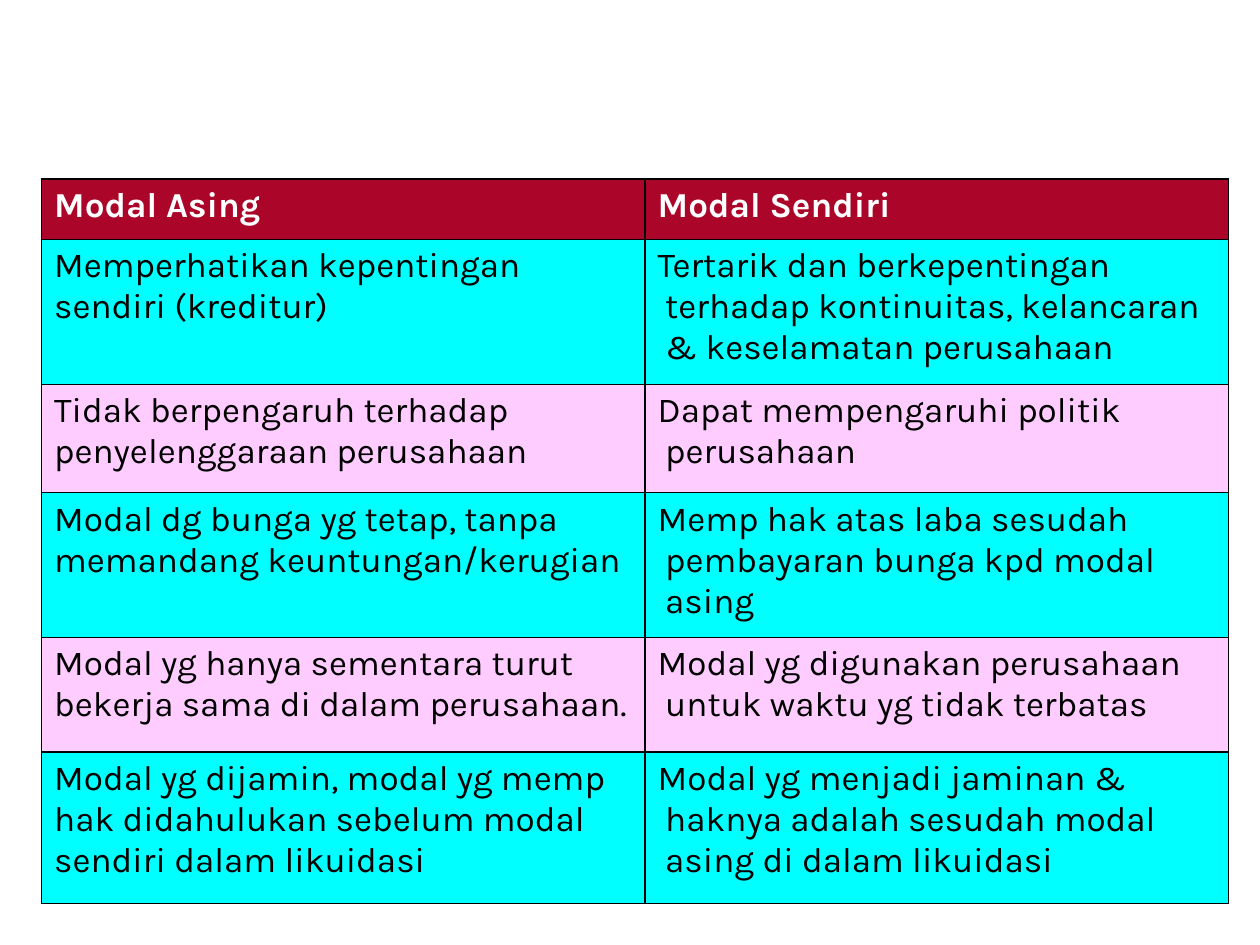
from lxml import etree
from pptx import Presentation
from pptx import util as u
from pptx.dml.color import RGBColor
from pptx.oxml.ns import qn

WHITE = RGBColor(0xFF, 0xFF, 0xFF)
BLACK = RGBColor(0, 0, 0)
RED = RGBColor(0xAB, 0x05, 0x29)
CYAN = RGBColor(0, 0xFF, 0xFF)
PINK = RGBColor(0xFF, 0xCC, 0xFF)

ROWS = [
    ("Modal Asing", "Modal Sendiri"),
    ("Memperhatikan kepentingan sendiri (kreditur)",
     "Tertarik dan berkepentingan terhadap kontinuitas, kelancaran & keselamatan perusahaan"),
    ("Tidak berpengaruh terhadap penyelenggaraan perusahaan",
     "Dapat mempengaruhi politik perusahaan"),
    ("Modal dg bunga yg tetap, tanpa memandang keuntungan/kerugian",
     "Memp hak atas laba sesudah pembayaran bunga kpd modal asing"),
    ("Modal yg hanya sementara turut bekerja sama di dalam perusahaan.",
     "Modal yg digunakan perusahaan untuk waktu yg tidak terbatas"),
    ("Modal yg dijamin, modal yg memp hak didahulukan sebelum modal sendiri dalam likuidasi",
     "Modal yg menjadi jaminan & haknya adalah sesudah modal asing di dalam likuidasi"),
]
WIDTHS = [4.79, 4.63]
HEIGHTS = [0.48, 1.15, 0.86, 1.15, 0.91, 1.2]
LEFT, TOP = 0.33, 1.42
HEAD_HANG = 0.38
BODY_HANGS = [0, 0.06]


def hang(par, size):
    """Indent all lines but the first by size inches."""
    props = par._p.get_or_add_pPr()
    props.set("marL", str(u.Inches(size)))
    props.set("indent", str(-u.Inches(size)))


def border(cell):
    props = cell._tc.get_or_add_tcPr()
    for i, side in enumerate(("lnL", "lnR", "lnT", "lnB")):
        line = etree.Element(qn("a:" + side), w=str(u.Pt(1)))
        fill = etree.SubElement(line, qn("a:solidFill"))
        etree.SubElement(fill, qn("a:srgbClr"), val=str(BLACK))
        props.insert(i, line)


def style(cell, words, fill, ink, bold, size):
    cell.fill.solid()
    cell.fill.fore_color.rgb = fill
    border(cell)
    cell.text = words
    par = cell.text_frame.paragraphs[0]
    hang(par, size)
    font = par.font
    font.name, font.size, font.bold = "Karla", u.Pt(20), bold
    font.color.rgb = ink


def main():
    deck = Presentation()
    deck.slide_width, deck.slide_height = u.Inches(10), u.Inches(7.5)
    slide = deck.slides.add_slide(deck.slide_layouts[6])
    table = slide.shapes.add_table(
        len(ROWS), len(WIDTHS), u.Inches(LEFT), u.Inches(TOP),
        u.Inches(sum(WIDTHS)), u.Inches(sum(HEIGHTS))).table
    for col, width in zip(table.columns, WIDTHS):
        col.width = u.Inches(width)
    for row, height in zip(table.rows, HEIGHTS):
        row.height = u.Inches(height)

    for r, pair in enumerate(ROWS):
        for c, words in enumerate(pair):
            cell = table.cell(r, c)
            if r == 0:
                style(cell, words, RED, WHITE, True, HEAD_HANG)
            else:
                fill = CYAN if r % 2 else PINK
                style(cell, words, fill, BLACK, False, BODY_HANGS[c])
    deck.save("out.pptx")


if __name__ == "__main__":
    main()
